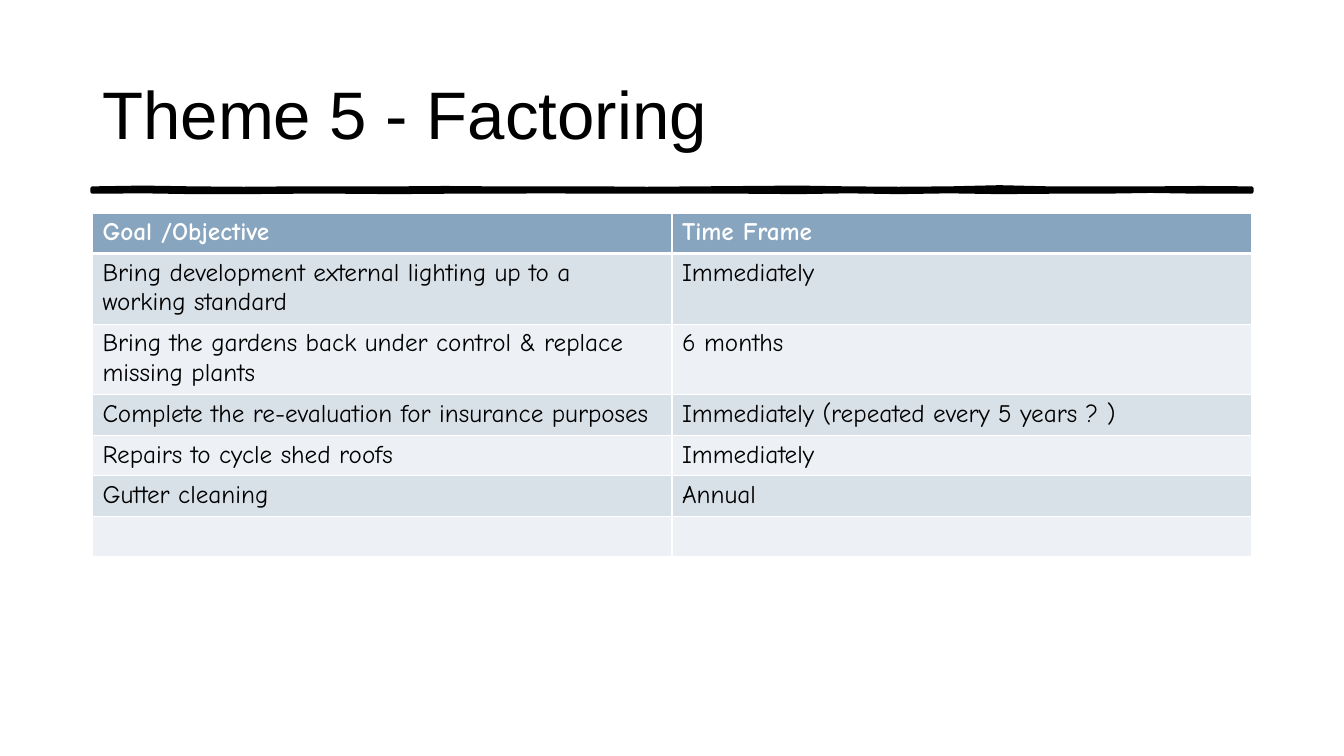
from lxml.etree import SubElement
from pptx import Presentation
from pptx.dml.color import RGBColor
from pptx.enum.text import MSO_ANCHOR
from pptx.oxml.ns import qn
from pptx.util import Cm, Pt

COLORS = {
    "ink": "000000",
    "paper": "FFFFFF",
    "header": "87A5BE",
    "odd": "D9E1E8",
    "even": "EDF0F4",
}
LEFT, WIDTH = 2.33, 29.21


def write(frame, text, font, size, color, bold=False):
    span = frame.paragraphs[0].add_run()
    span.text = text
    span.font.name = font
    span.font.size = Pt(size)
    span.font.bold = bold
    span.font.color.rgb = RGBColor.from_string(COLORS[color])


deck = Presentation()
deck.slide_width, deck.slide_height = Cm(33.87), Cm(19.05)
page = deck.slides.add_slide(deck.slide_layouts[6])

strokes = [
    {
        "top": [0, -2, 0, 1, 0, 0, 0, -1, 0, 0, 0, 1, 0, -1, -2, 0, 1, 0, -3, 0, 0, 0, -1, 0],
        "bottom": [0, -1, 1, 1, 0, 0, 1, 0, 0, -1, 0, 0, 0, 0, 1, -1, 1, -1, 1, 0, 0, -2, 0, 0],
        "filled": False,
    },
    {
        "top": [0, 2, -1, 0, -1, 1, -1, 1, 0, 0, 1, -1, -1, 2, 2, -1, 0, 0, -1, 1, 2, -2, 1, 0],
        "bottom": [0, 1, 0, 0, 1, 0, 1, 0, 0, 0, 1, -2, 0, -1, 2, 0, 1, 1, 2, 0, 1, 0, 0, 0],
        "filled": True,
    },
]
for stroke in strokes:
    step = WIDTH / (len(stroke["top"]) - 1)
    upper = [(Cm(LEFT + i * step), Cm(4.75 + wave / 100)) for i, wave in enumerate(stroke["top"])]
    lower = [(Cm(LEFT + i * step), Cm(4.83 + wave / 100)) for i, wave in enumerate(stroke["bottom"])]
    builder = page.shapes.build_freeform(*upper[0])
    builder.add_line_segments(upper[1:] + lower[::-1], close=True)
    rule = builder.convert_to_shape()
    rule.shadow.inherit = False
    if stroke["filled"]:
        rule.fill.solid()
        rule.fill.fore_color.rgb = RGBColor.from_string(COLORS["ink"])
        rule.line.fill.background()
    else:
        rule.fill.background()
        rule.line.color.rgb = RGBColor.from_string(COLORS["ink"])
        rule.line.width = Pt(3)

title = page.shapes.add_textbox(Cm(LEFT), Cm(1.01), Cm(WIDTH), Cm(3.68)).text_frame
title.word_wrap = True
title.vertical_anchor = MSO_ANCHOR.MIDDLE
write(title, "Theme 5 - Factoring", "Arial", 48, "ink")

goals = [
    ("Goal /Objective", "Time Frame", 1.02),
    ("Bring development external lighting up to a working standard", "Immediately", 1.72),
    ("Bring the gardens back under control & replace missing plants", "6 months", 1.72),
    ("Complete the re-evaluation for insurance purposes", "Immediately (repeated every 5 years ? )", 1.02),
    ("Repairs to cycle shed roofs", "Immediately", 1.02),
    ("Gutter cleaning", "Annual", 1.02),
    ("", "", 1.02),
]
height = sum(goal[2] for goal in goals)
table = page.shapes.add_table(len(goals), 2, Cm(LEFT), Cm(5.37), Cm(WIDTH), Cm(height)).table
for column in table.columns:
    column.width = Cm(WIDTH / 2)

for row, (objective, time_frame, row_height) in enumerate(goals):
    table.rows[row].height = Cm(row_height)
    is_header = row == 0
    shade = "header" if is_header else "odd" if row % 2 else "even"
    for column, text in enumerate((objective, time_frame)):
        cell = table.cell(row, column)
        properties = cell._tc.get_or_add_tcPr()
        for side in ("L", "R", "T", "B"):
            thick = (row, side) in ((0, "B"), (1, "T"))
            border = SubElement(properties, qn(f"a:ln{side}"), w=str(Pt(3 if thick else 1)))
            SubElement(SubElement(border, qn("a:solidFill")), qn("a:srgbClr"), val=COLORS["paper"])
        cell.fill.solid()
        cell.fill.fore_color.rgb = RGBColor.from_string(COLORS[shade])
        if text:
            write(cell.text_frame, text, "Comic Neue", 18, "paper" if is_header else "ink", is_header)

deck.save("out.pptx")
